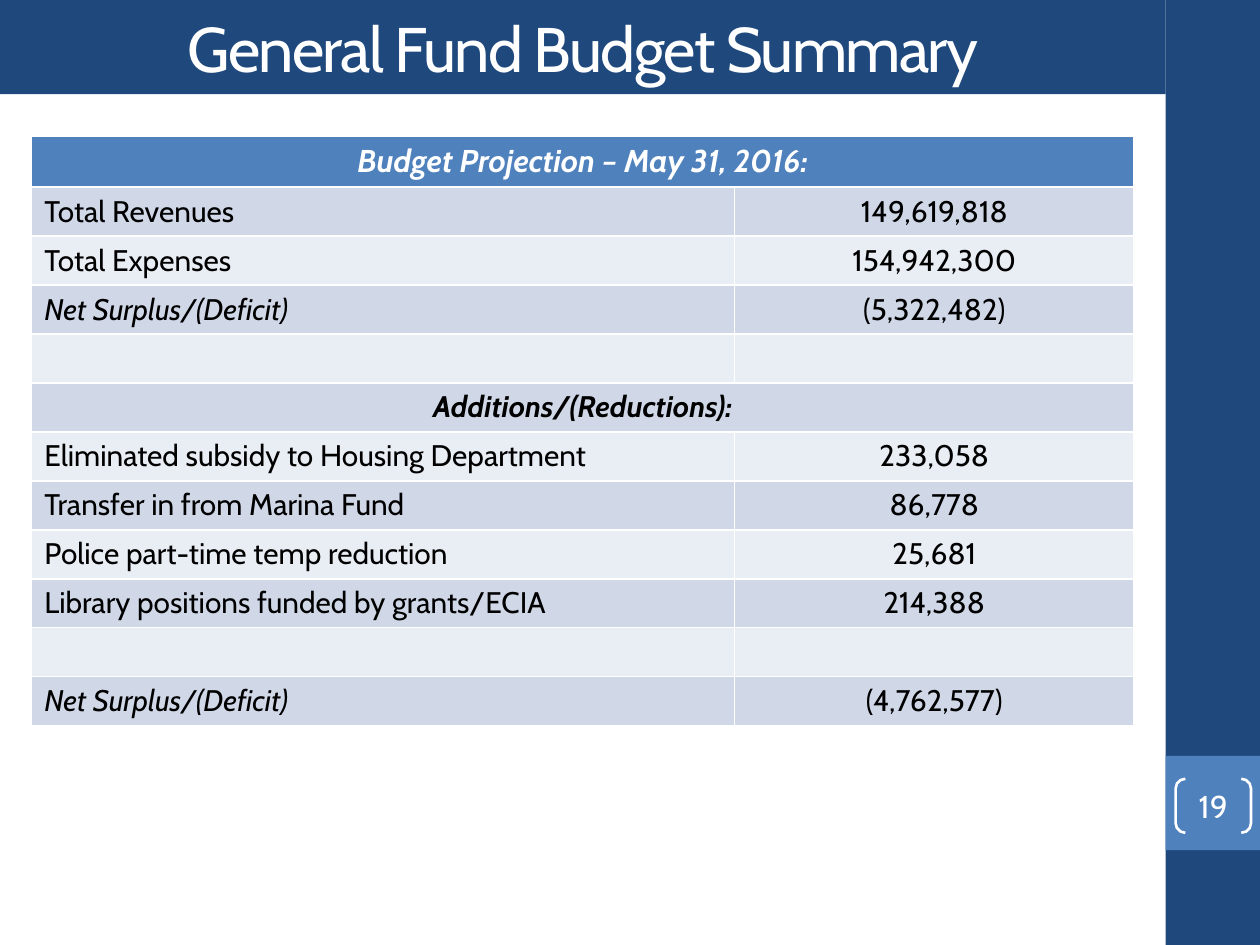
"""Build the General Fund budget summary slide."""
from typing import NamedTuple

from pptx import Presentation
from pptx.dml.color import RGBColor
from pptx.enum.shapes import MSO_SHAPE as Form
from pptx.enum.text import MSO_ANCHOR as Anchor, MSO_AUTO_SIZE as Fit, PP_ALIGN as Align
from pptx.util import Cm, Pt

NAVY = RGBColor(0x1F, 0x49, 0x7D)
BLUE = RGBColor(0x4F, 0x81, 0xBD)
DARK = RGBColor(0xD0, 0xD8, 0xE8)
PALE = RGBColor(0xE9, 0xED, 0xF4)
WHITE = RGBColor(0xFF, 0xFF, 0xFF)
BLACK = RGBColor(0x00, 0x00, 0x00)

HEAD = {"name": "Cabin", "size": Pt(36)}
MARK = {"name": "Cabin", "size": Pt(18)}
TOP = {"name": "Cabin", "size": Pt(18), "bold": True, "italic": True}
BODY = {"name": "Cabin", "size": Pt(17), "bold": False, "italic": False}
NET = BODY | {"italic": True}
PART = NET | {"bold": True}
FRAME = {"word_wrap": True, "auto_size": Fit.NONE, "vertical_anchor": Anchor.MIDDLE}
FLUSH = dict.fromkeys(("margin_left", "margin_top", "margin_right", "margin_bottom"), 0)


class Box(NamedTuple):
    left: float
    top: float
    width: float
    height: float


class Row(NamedTuple):
    label: str = ""
    value: str = ""
    style: dict = BODY
    wide: bool = False


BARS = [(Box(23.5, 0, 1.9, 19.05), NAVY), (Box(23.5, 15.24, 1.9, 1.9), BLUE)]
TITLE = Box(0, 0, 23.5, 1.9)
PAGE = Box(23.7, 15.7, 1.52, 1.09)
GRID = Box(0.64, 2.74, 22.22, 11.74)
COLS = (14.17, 8.05)
ROWS = [
    Row("Budget Projection – May 31, 2016:", style=TOP, wide=True),
    Row("Total Revenues", "149,619,818"),
    Row("Total Expenses", "154,942,300"),
    Row("Net Surplus/(Deficit)", "(5,322,482)", NET),
    Row(),
    Row("Additions/(Reductions):", style=PART, wide=True),
    Row("Eliminated subsidy to Housing Department", "233,058"),
    Row("Transfer in from Marina Fund", "86,778"),
    Row("Police part-time temp reduction", "25,681"),
    Row("Library positions funded by grants/ECIA", "214,388"),
    Row(),
    Row("Net Surplus/(Deficit)", "(4,762,577)", NET),
]


def apply(item, style: dict) -> None:
    """Set each named value on the item."""
    for name, value in style.items():
        setattr(item, name, value)


def place(box: Box) -> list:
    """Give the box as lengths."""
    return [Cm(side) for side in box]


def paint(item, color: RGBColor) -> None:
    """Fill the item with one colour."""
    item.fill.solid()
    item.fill.fore_color.rgb = color


def write(frame, text: str, style: dict, color: RGBColor, align: Align):
    """Write one styled line and return its run."""
    line = frame.paragraphs[0]
    line.alignment = align
    if not text:
        line._p.get_or_add_endParaRPr().set("sz", str(int(style["size"].pt * 100)))
        return None
    run = line.add_run()
    run.text = text
    apply(run.font, style)
    run.font.color.rgb = color
    return run


def add_bar(slide, box: Box, color: RGBColor) -> None:
    """Draw a plain side bar."""
    bar = slide.shapes.add_shape(Form.RECTANGLE, *place(box))
    bar.shadow.inherit = False
    paint(bar, color)
    bar.line.fill.background()


def add_title(slide, text: str) -> None:
    """Move and fill the title placeholder."""
    title = slide.shapes.title
    apply(title, dict(zip(Box._fields, place(TITLE))))
    paint(title, NAVY)
    apply(title.text_frame, FRAME)
    run = write(title.text_frame, text, HEAD, WHITE, Align.CENTER)
    run.font._element.set("spc", "-100")


def add_page(slide, text: str) -> None:
    """Draw the page number in brackets."""
    mark = slide.shapes.add_shape(Form.DOUBLE_BRACKET, *place(PAGE))
    mark.shadow.inherit = False
    mark.adjustments[0] = 0.18
    mark.fill.background()
    mark.line.color.rgb = WHITE
    mark.line.width = Pt(1.5)
    apply(mark.text_frame, FRAME | FLUSH)
    write(mark.text_frame, text, MARK, WHITE, Align.CENTER)


def add_grid(slide, rows: list[Row]) -> None:
    """Draw the budget table."""
    grid = slide.shapes.add_table(len(rows), len(COLS), *place(GRID)).table
    for col, width in zip(grid.columns, COLS):
        col.width = Cm(width)
    for num, row in enumerate(rows):
        grid.rows[num].height = Cm(GRID.height / len(rows))
        left, right = grid.cell(num, 0), grid.cell(num, 1)
        for cell in (left, right):
            paint(cell, BLUE if num == 0 else DARK if num % 2 else PALE)
        side = Align.CENTER if row.wide else Align.LEFT
        write(left.text_frame, row.label, row.style, BLACK if num else WHITE, side)
        if row.wide:
            left.merge(right)
        else:
            write(right.text_frame, row.value, BODY, BLACK, Align.CENTER)


def main() -> None:
    """Build and save the deck."""
    deck = Presentation()
    deck.slide_width, deck.slide_height = Cm(25.4), Cm(19.05)
    slide = deck.slides.add_slide(deck.slide_layouts[5])
    for box, color in BARS:
        add_bar(slide, box, color)
    add_title(slide, "General Fund Budget Summary")
    add_page(slide, "19")
    add_grid(slide, ROWS)
    deck.save("out.pptx")


if __name__ == "__main__":
    main()
